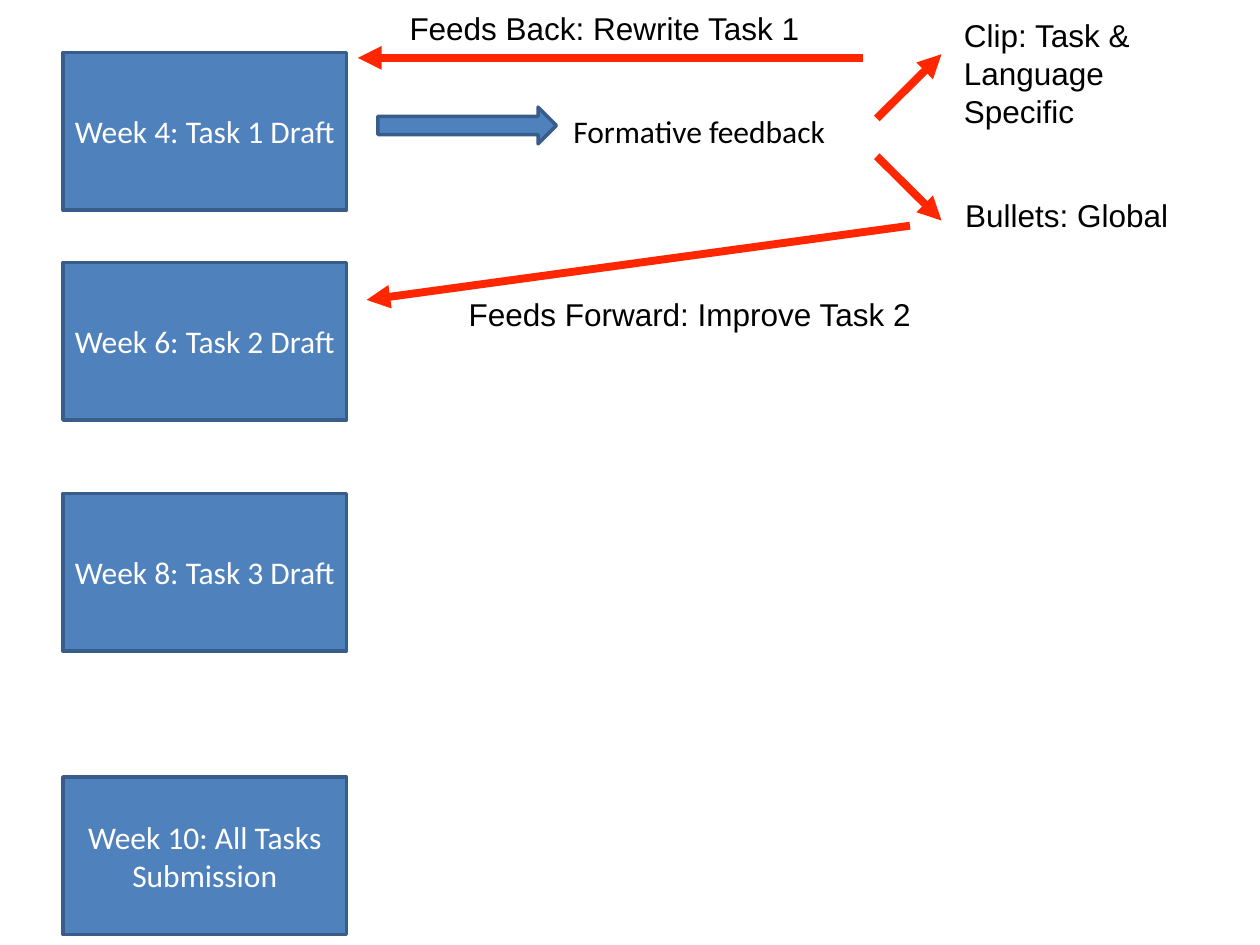
from dataclasses import dataclass

from lxml import etree
from pptx import Presentation
from pptx.dml.color import RGBColor
from pptx.enum.shapes import MSO_CONNECTOR, MSO_SHAPE
from pptx.enum.text import MSO_ANCHOR, PP_ALIGN
from pptx.oxml.ns import qn
from pptx.shapes.autoshape import Shape
from pptx.slide import Slide
from pptx.text.text import TextFrame
from pptx.util import Pt

RECTANGLE = MSO_SHAPE.RECTANGLE
RIGHT_ARROW = MSO_SHAPE.RIGHT_ARROW
STRAIGHT = MSO_CONNECTOR.STRAIGHT
MIDDLE, TOP = MSO_ANCHOR.MIDDLE, MSO_ANCHOR.TOP
CENTER, LEFT = PP_ALIGN.CENTER, PP_ALIGN.LEFT

COLORS = {
    "blue": "4F81BD",
    "outline": "385D8A",
    "red": "FF2600",
    "black": "000000",
    "white": "FFFFFF",
}

STAGE_LEFT, STAGE_WIDTH, STAGE_HEIGHT = 36, 162, 90


@dataclass
class Stage:
    text: str
    top: float


@dataclass
class Label:
    lines: list[str]
    left: float
    top: float
    width: float
    height: float
    font: str = "Arial"
    wrap: bool = True


@dataclass
class Flow:
    start: tuple[float, float]
    end: tuple[float, float]


STAGES = [
    Stage("Week 4: Task 1 Draft", 30),
    Stage("Week 6: Task 2 Draft", 150),
    Stage("Week 8: Task 3 Draft", 282),
    Stage("Week 10: All Tasks Submission", 444),
]

LABELS = [
    Label(["Formative feedback"], 324, 60.5, 180, 28, font="Calibri"),
    Label(["Clip: Task &", "Language", "Specific"], 547.2, 5.8, 115, 70, wrap=False),
    Label(["Bullets: Global"], 548, 108.7, 124.5, 27.4, wrap=False),
    Label(["Feeds Forward: Improve Task 2"], 264.2, 164.9, 311, 27.4),
    Label(["Feeds Back: Rewrite Task 1"], 230.4, 1.4, 278, 27.4),
]

FLOWS = [
    Flow((501, 67.7), (538, 31)),
    Flow((501, 89.3), (538, 126)),
    Flow((520, 129), (209.5, 171.4)),
    Flow((493.2, 33.1), (204.5, 33.1)),
]


def rgb(name: str) -> RGBColor:
    return RGBColor.from_string(COLORS[name])


def write_text(frame: TextFrame, lines: list[str], font: str, color: str,
               align: PP_ALIGN, anchor: MSO_ANCHOR, inset: float, wrap: bool) -> None:
    margins = {f"margin_{side}": Pt(inset) for side in ("left", "top", "right", "bottom")}
    for attribute, value in {**margins, "vertical_anchor": anchor, "word_wrap": wrap}.items():
        setattr(frame, attribute, value)
    frame.text = "\n".join(lines)
    for paragraph in frame.paragraphs:
        paragraph.alignment = align
        for attribute, value in {"name": font, "size": Pt(18)}.items():
            setattr(paragraph.font, attribute, value)
        paragraph.font.color.rgb = rgb(color)


def draw_block(slide: Slide, preset: MSO_SHAPE, left: float, top: float,
               width: float, height: float) -> Shape:
    block = slide.shapes.add_shape(preset, Pt(left), Pt(top), Pt(width), Pt(height))
    block.shadow.inherit = False
    block.fill.solid()
    block.fill.fore_color.rgb = rgb("blue")
    block.line.color.rgb = rgb("outline")
    block.line.width = Pt(2)
    return block


def draw_stage(slide: Slide, stage: Stage) -> None:
    block = draw_block(slide, RECTANGLE, STAGE_LEFT, stage.top, STAGE_WIDTH, STAGE_HEIGHT)
    write_text(block.text_frame, [stage.text], "Calibri", "white", CENTER, MIDDLE, 0, True)


def draw_label(slide: Slide, label: Label) -> None:
    box = slide.shapes.add_textbox(
        Pt(label.left), Pt(label.top), Pt(label.width), Pt(label.height))
    write_text(box.text_frame, label.lines, label.font, "black", LEFT, TOP, 3.6, label.wrap)


def draw_flow(slide: Slide, flow: Flow) -> None:
    arrow = slide.shapes.add_connector(
        STRAIGHT, *(Pt(value) for value in (*flow.start, *flow.end)))
    arrow.line.color.rgb = rgb("red")
    arrow.line.width = Pt(4.5)
    properties = arrow.element.spPr
    etree.SubElement(properties.find(qn("a:ln")), qn("a:tailEnd"), type="triangle")
    etree.SubElement(properties, qn("a:effectLst"))


def main() -> None:
    deck = Presentation()
    deck.slide_width, deck.slide_height = Pt(720), Pt(540)
    slide = deck.slides.add_slide(deck.slide_layouts[6])
    for stage in STAGES:
        draw_stage(slide, stage)
    draw_block(slide, RIGHT_ARROW, 216, 61.2, 102, 21)
    for label in LABELS:
        draw_label(slide, label)
    for flow in FLOWS:
        draw_flow(slide, flow)
    deck.save("out.pptx")


if __name__ == "__main__":
    main()
